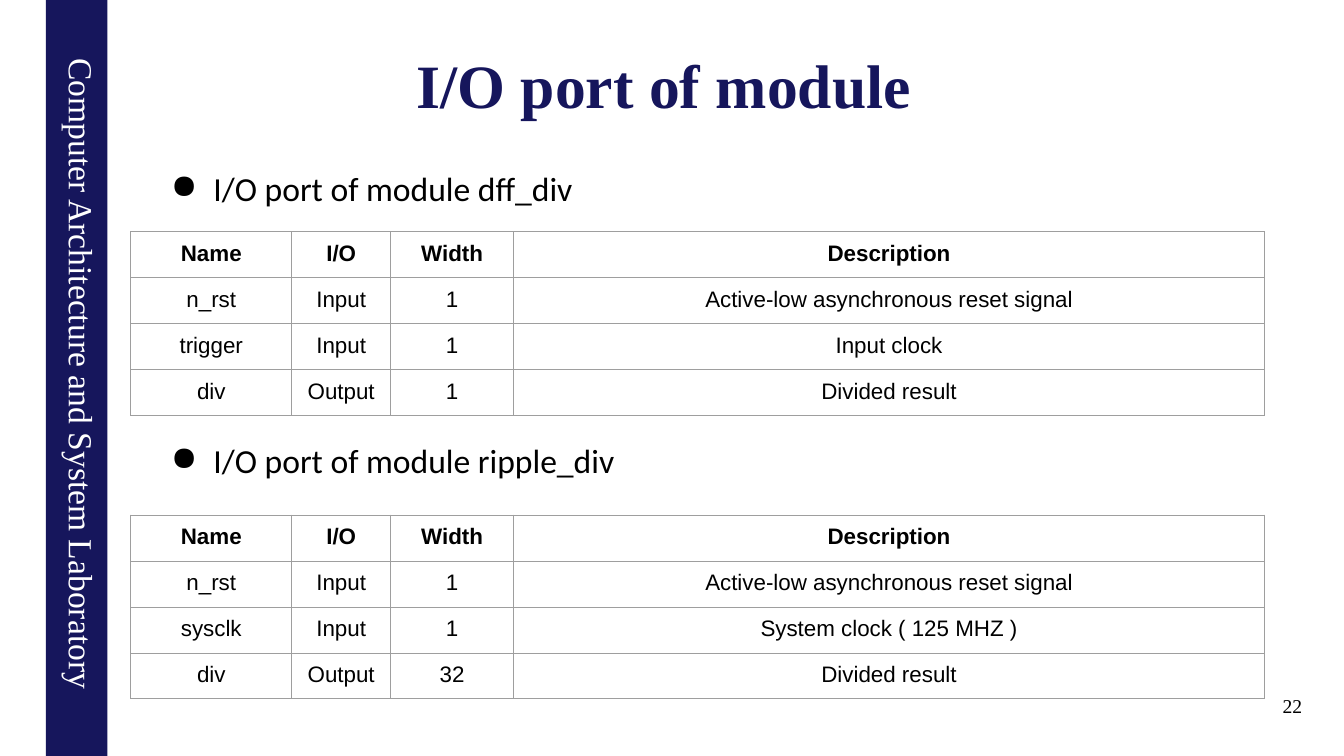
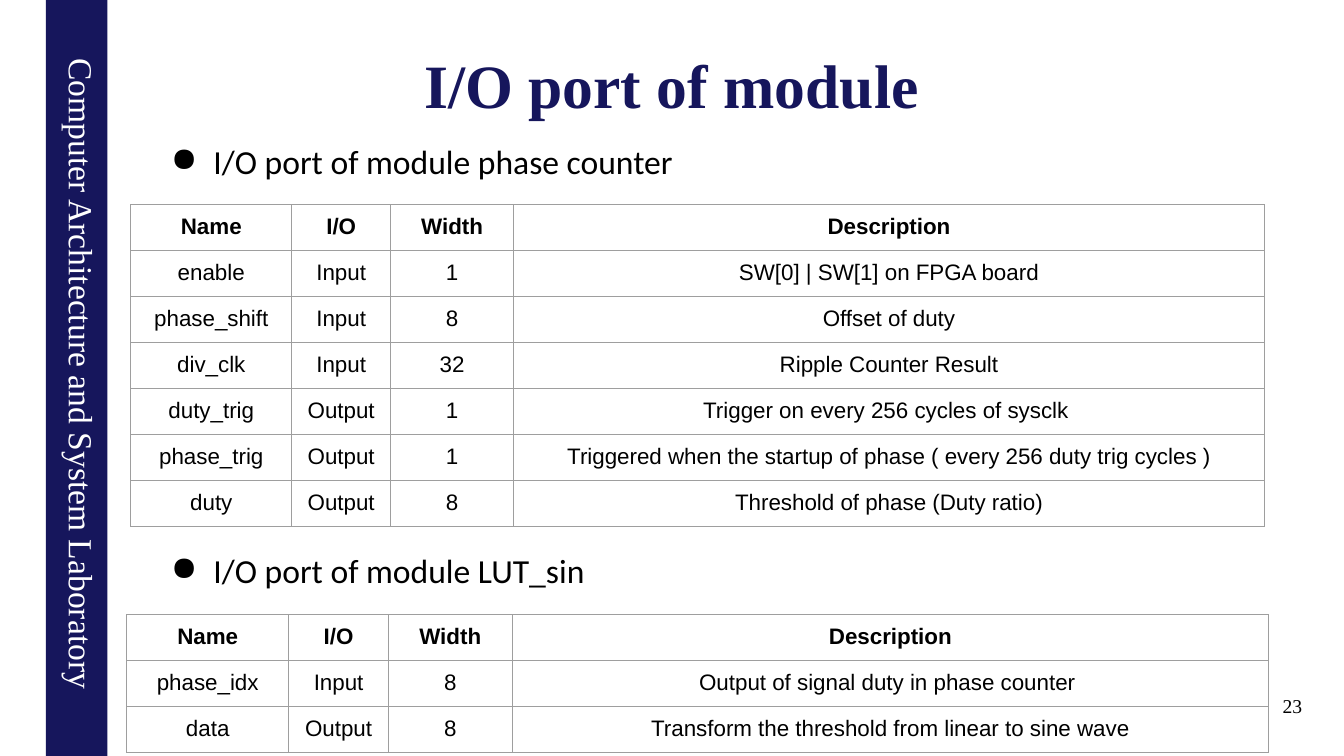
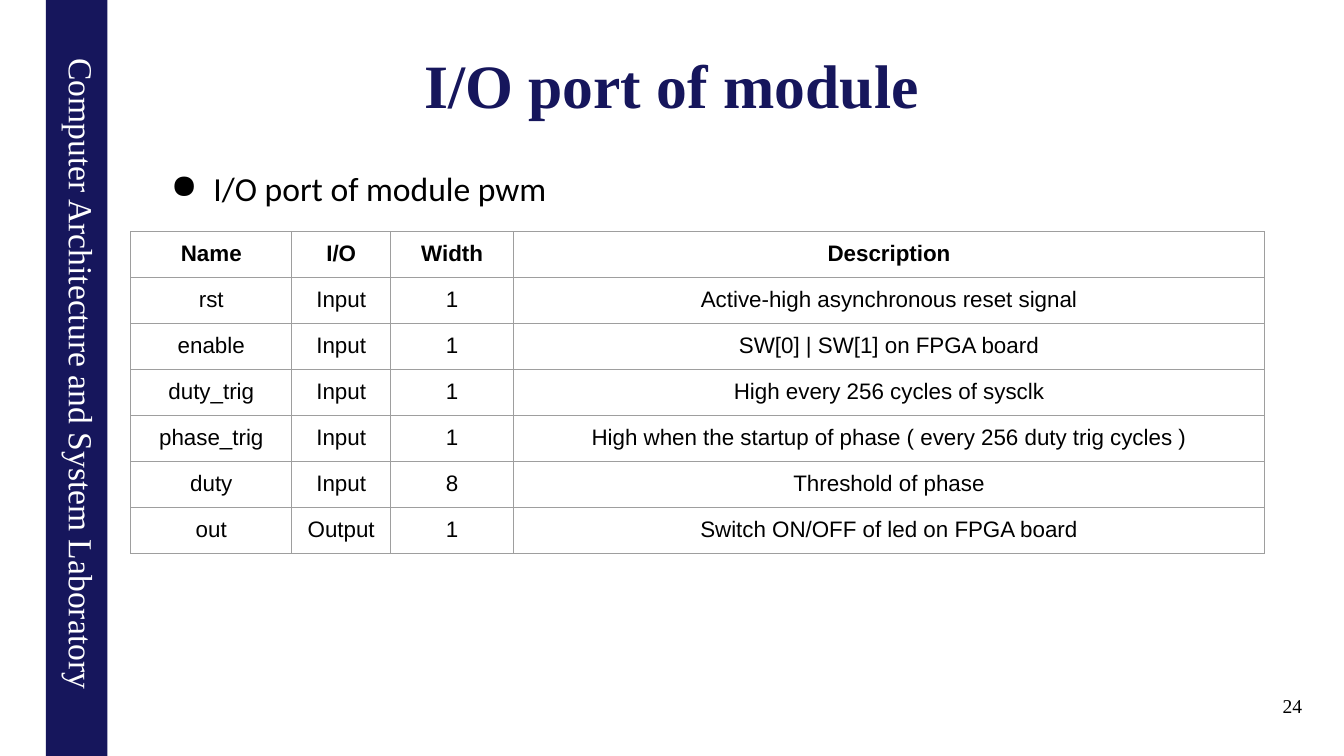
from lxml import etree
from pptx import Presentation
from pptx.dml.color import RGBColor
from pptx.enum.shapes import MSO_SHAPE
from pptx.enum.text import MSO_ANCHOR, MSO_AUTO_SIZE, PP_ALIGN
from pptx.oxml.ns import qn
from pptx.util import Cm, Pt

RECT = MSO_SHAPE.RECTANGLE
TOP, MIDDLE = MSO_ANCHOR.TOP, MSO_ANCHOR.MIDDLE
LEFT, CENTER, RIGHT = PP_ALIGN.LEFT, PP_ALIGN.CENTER, PP_ALIGN.RIGHT

NAVY = RGBColor(0x16, 0x16, 0x5C)
WHITE = RGBColor(0xFF, 0xFF, 0xFF)
BLACK = RGBColor(0, 0, 0)
GRAY = RGBColor(0x9E, 0x9E, 0x9E)
SERIF, SANS, BODY = "Times New Roman", "Arial", "Calibri"

LAB = "Computer Architecture and System Laboratory "
HEAD = ("Name", "I/O", "Width", "Description")
FIRST = 22

# Lengths in cm
WIDE, HIGH = 33.87, 19.05
BAND_MID, BAND_WIDE = 1.93, 1.55
COLS = (4.06, 2.49, 3.1, 18.92)
TABLE_MID = 17.58
ROW = 1.13

# Each slide: title, then (label, label top, table top, table width, rows)
SLIDES = [
    ("I/O port of module ", [
        ("I/O port of module dff_div", 4.11, 5.84, 28.57, [
            ("n_rst", "Input", "1", "Active-low asynchronous reset signal"),
            ("trigger", "Input", "1", "Input clock"),
            ("div", "Output", "1", "Divided result"),
        ]),
        ("I/O port of module ripple_div", 10.97, 12.98, 28.57, [
            ("n_rst", "Input", "1", "Active-low asynchronous reset signal"),
            ("sysclk", "Input", "1", "System clock ( 125 MHZ )"),
            ("div", "Output", "32", "Divided result"),
        ]),
    ]),
    ("I/O port of module", [
        ("I/O port of module phase counter", 3.43, 5.16, 28.57, [
            ("enable", "Input", "1", "SW[0] | SW[1] on FPGA board"),
            ("phase_shift", "Input", "8", "Offset of duty"),
            ("div_clk", "Input", "32", "Ripple Counter Result"),
            ("duty_trig", "Output", "1",
             "Trigger on every 256 cycles of sysclk "),
            ("phase_trig", "Output", "1",
             "Triggered when the startup of phase"
             " ( every 256 duty trig cycles )"),
            ("duty", "Output", "8", "Threshold of phase (Duty ratio)"),
        ]),
        ("I/O port of module LUT_sin", 13.74, 15.49, 28.78, [
            ("phase_idx", "Input", "8",
             "Output of signal duty in phase counter "),
            ("data", "Output", "8",
             "Transform the threshold from linear to sine wave"),
        ]),
    ]),
    ("I/O port of module", [
        ("I/O port of module pwm", 4.11, 5.84, 28.57, [
            ("rst", "Input", "1", "Active-high asynchronous reset signal"),
            ("enable", "Input", "1", "SW[0] | SW[1] on FPGA board"),
            ("duty_trig", "Input", "1", "High every 256 cycles of sysclk"),
            ("phase_trig", "Input", "1",
             "High when the startup of phase ( every 256 duty trig cycles )"),
            ("duty", "Input", "8", "Threshold of phase"),
            ("out", "Output", "1", "Switch ON/OFF of led on FPGA board"),
        ]),
    ]),
]


def write(frame, text, *, size, font, color=BLACK, bold=False, align=LEFT,
          anchor=TOP):
    frame.word_wrap = True
    frame.vertical_anchor = anchor
    para = frame.paragraphs[0]
    para.alignment = align
    run = para.add_run()
    run.text = text
    run.font.size = Pt(size)
    run.font.name = font
    run.font.bold = bold
    run.font.color.rgb = color
    return para


def paint(parent, color):
    """Append a solid fill to an XML element."""
    fill = etree.SubElement(parent, qn("a:solidFill"))
    etree.SubElement(fill, qn("a:srgbClr"), val=str(color))


def add_band(slide, layout):
    """Draw the side band and move it to the layout, behind the title."""
    band = slide.shapes.add_shape(
        RECT, Cm(BAND_MID - HIGH / 2), Cm((HIGH - BAND_WIDE) / 2),
        Cm(HIGH), Cm(BAND_WIDE))
    band.rotation = 90
    band.shadow.inherit = False
    band.fill.solid()
    band.fill.fore_color.rgb = NAVY
    band.line.fill.background()
    write(band.text_frame, LAB, size=24, font=SERIF, color=WHITE,
          align=CENTER)
    layout.shapes.element.insert(2, band.element)


def add_title(slide, text):
    title = slide.shapes.title
    title.left, title.top = Cm(2.54), Cm(0.53)
    title.width, title.height = Cm(28.78), Cm(3.18)
    title.text_frame.auto_size = MSO_AUTO_SIZE.NONE
    write(title.text_frame, text, size=44, font=SERIF, color=NAVY,
          bold=True, align=CENTER, anchor=MIDDLE)


def add_label(slide, text, top):
    box = slide.shapes.add_textbox(Cm(3.86), Cm(top), Cm(27.46), Cm(1.3))
    para = write(box.text_frame, text, size=24, font=BODY)
    props = para._p.get_or_add_pPr()
    props.set("marL", str(Cm(1.27)))
    props.set("indent", str(Cm(-1.07)))
    tint = etree.SubElement(props, qn("a:buClr"))
    etree.SubElement(tint, qn("a:srgbClr"), val=str(BLACK))
    etree.SubElement(props, qn("a:buChar"), char="●")


def style_cell(cell):
    cell.margin_left = cell.margin_right = Cm(0.25)
    cell.margin_top = cell.margin_bottom = Cm(0.24)
    props = cell._tc.get_or_add_tcPr()
    for side in ("a:lnL", "a:lnR", "a:lnT", "a:lnB"):
        paint(etree.SubElement(props, qn(side), w=str(Pt(0.75))), GRAY)
    cell.fill.background()


def add_ports(slide, top, width, ports):
    rows = [HEAD] + ports
    table = slide.shapes.add_table(
        len(rows), len(COLS), Cm(TABLE_MID - width / 2), Cm(top),
        Cm(width), Cm(ROW * len(rows))).table
    table.first_row = table.horz_banding = False
    for col, part in zip(table.columns, COLS):
        col.width = Cm(part * width / sum(COLS))
    for i, row in enumerate(rows):
        table.rows[i].height = Cm(ROW)
        for j, text in enumerate(row):
            cell = table.cell(i, j)
            style_cell(cell)
            write(cell.text_frame, text, size=16, font=SANS,
                  bold=i == 0, align=CENTER)


def add_number(slide, num):
    box = slide.shapes.add_textbox(Cm(26.01), Cm(17.35), Cm(7.06), Cm(1.27))
    write(box.text_frame, str(num), size=14, font=SERIF, align=RIGHT)


def main():
    prs = Presentation()
    prs.slide_width, prs.slide_height = Cm(WIDE), Cm(HIGH)
    layout = prs.slide_layouts[5]
    for num, (title, groups) in enumerate(SLIDES, FIRST):
        slide = prs.slides.add_slide(layout)
        if num == FIRST:
            add_band(slide, layout)
        add_title(slide, title)
        for label, label_top, top, width, ports in groups:
            add_label(slide, label, label_top)
            add_ports(slide, top, width, ports)
        add_number(slide, num)
    prs.save("out.pptx")


if __name__ == "__main__":
    main()
